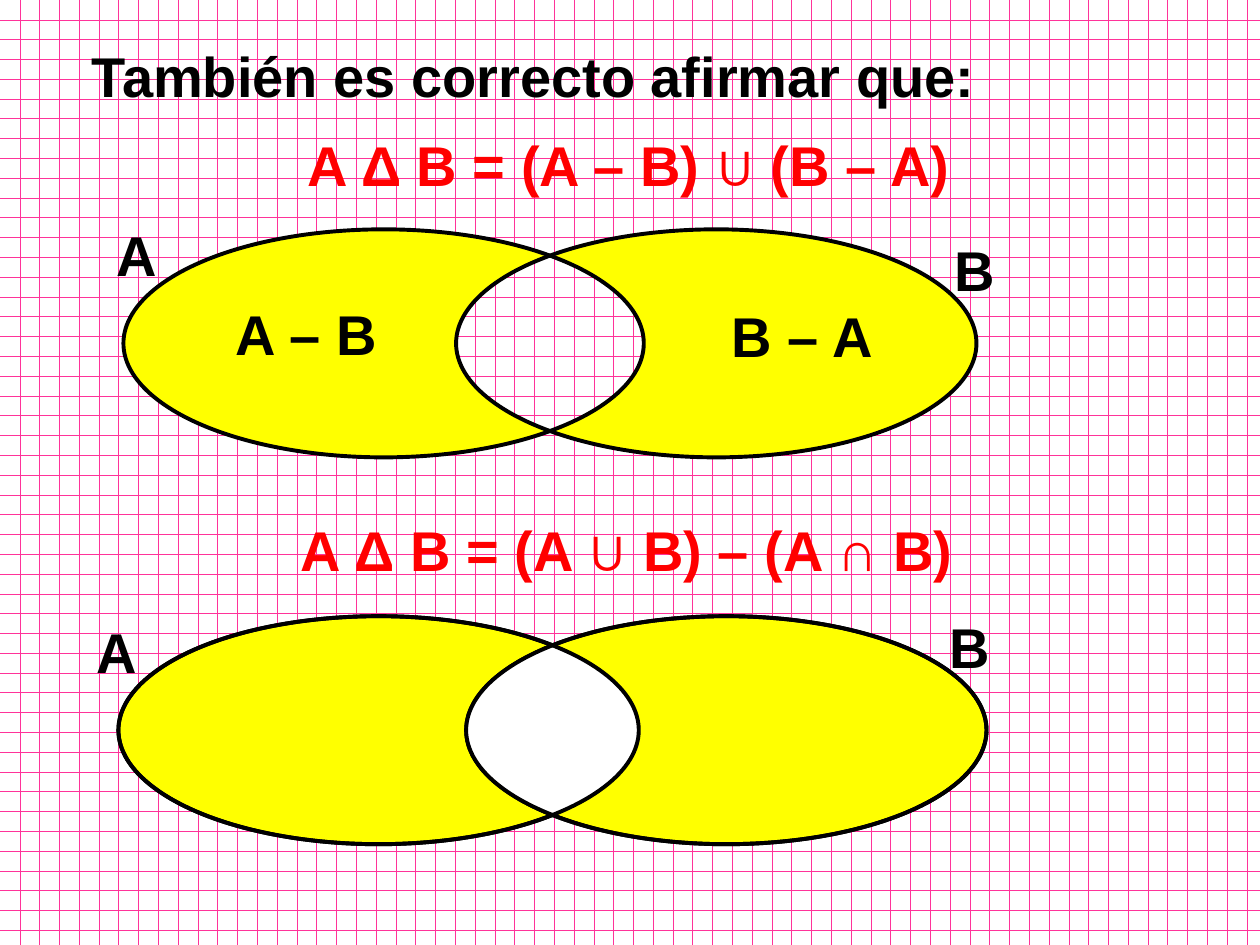
import math
from dataclasses import dataclass

import pptx
import pptx.dml.color
import pptx.enum.dml
import pptx.enum.shapes
import pptx.enum.text
import pptx.util

RGB = pptx.dml.color.RGBColor.from_string
Inches, Pt = pptx.util.Inches, pptx.util.Pt


@dataclass(frozen=True)
class Theme:
    font: str = "Arial"
    size: float = 32
    ink: str = "000000"
    accent: str = "FF0000"
    area: str = "FFFF00"
    paper: str = "FFFFFF"
    grid: str = "FF3399"
    outline: float = 2.25
    hairline: float = 0.75


THEME = Theme()
SLIDE_W, SLIDE_H = 10, 7.5
OVAL_W, OVAL_H = 4.13, 1.81


def set_text(sp, text, color=THEME.ink, wrap=True):
    """Write one bold, left-aligned line into a box or placeholder."""
    tf = sp.text_frame
    tf.word_wrap = wrap
    tf.auto_size = pptx.enum.text.MSO_AUTO_SIZE.SHAPE_TO_FIT_TEXT
    tf.vertical_anchor = pptx.enum.text.MSO_ANCHOR.TOP
    p = tf.paragraphs[0]
    p.alignment = pptx.enum.text.PP_ALIGN.LEFT
    r = p.add_run()
    r.text = text
    r.font.name, r.font.size, r.font.bold = THEME.font, Pt(THEME.size), True
    r.font.color.rgb = RGB(color)


def add_label(s, text, x, y, w, color=THEME.ink, wrap=True):
    sp = s.shapes.add_textbox(Inches(x), Inches(y), Inches(w), Inches(0.64))
    set_text(sp, text, color, wrap)


def style(sp, fill, width):
    sp.shadow.inherit = False
    if fill:
        sp.fill.solid()
        sp.fill.fore_color.rgb = RGB(fill)
    else:
        sp.fill.background()
    sp.line.color.rgb = RGB(THEME.ink)
    sp.line.width = Pt(width)


def add_ovals(s, lefts, top, fill=None):
    for left in lefts:
        sp = s.shapes.add_shape(pptx.enum.shapes.MSO_SHAPE.OVAL, Inches(left),
                                Inches(top), Inches(OVAL_W), Inches(OVAL_H))
        style(sp, fill, THEME.outline)


def arc(left, top, start, end, steps=60):
    """Points along an oval between two angles."""
    angles = (start + (end - start) * i / steps for i in range(steps + 1))
    return [(Inches(left + OVAL_W / 2 * (1 + math.cos(a))),
             Inches(top + OVAL_H / 2 * (1 + math.sin(a)))) for a in angles]


def add_region(s, points, fill):
    fb = s.shapes.build_freeform(*points[0])
    fb.add_line_segments(points[1:], close=True)
    style(fb.convert_to_shape(), fill, THEME.hairline)


def crossing_angle(lefts):
    """Angle at which the two ovals meet, seen from the left one."""
    return math.acos((lefts[1] - lefts[0]) / OVAL_W)


def add_differences(s, lefts, top):
    """Crescents A – B and B – A."""
    (a, b), t, pi = lefts, crossing_angle(lefts), math.pi
    add_region(s, arc(b, top, pi + t, 3 * pi - t) + arc(a, top, t, -t), THEME.area)
    add_region(s, arc(a, top, t, 2 * pi - t) + arc(b, top, pi + t, pi - t), THEME.area)


def add_intersection(s, lefts, top):
    (a, b), t, pi = lefts, crossing_angle(lefts), math.pi
    add_region(s, arc(a, top, -t, t) + arc(b, top, pi - t, pi + t), THEME.paper)


def main():
    prs = pptx.Presentation()
    prs.slide_width, prs.slide_height = Inches(SLIDE_W), Inches(SLIDE_H)
    s = prs.slides.add_slide(prs.slide_layouts[5])

    # Grid paper background
    fill = s.background.fill
    fill.patterned()
    fill.pattern = pptx.enum.dml.MSO_PATTERN.DOTTED_GRID
    fill.fore_color.rgb, fill.back_color.rgb = RGB(THEME.grid), RGB(THEME.paper)

    # Title
    title = s.shapes.title
    title.left, title.top = Inches(0.63), Inches(0.28)
    title.width, title.height = Inches(8.15), Inches(0.63)
    set_text(title, "También es correcto afirmar que:")

    # Upper diagram: union of the differences
    upper, top = (0.98, 3.62), 1.82
    add_differences(s, upper, top)
    add_ovals(s, upper, top)

    # Lower diagram: union minus intersection
    lower, top = (0.94, 3.7), 4.89
    add_ovals(s, lower, top, THEME.area)
    add_intersection(s, lower, top)
    add_ovals(s, lower, top)

    # Set names and region names
    for text, x, y, w in (("A", 0.83, 1.7, 0.59), ("B", 7.48, 1.82, 0.59),
                          ("A – B", 1.77, 2.33, 1.42), ("B – A", 5.71, 2.34, 1.42),
                          ("A", 0.67, 4.85, 0.59), ("B", 7.44, 4.81, 0.59)):
        add_label(s, text, x, y, w)

    # Formulas, centred on the slide
    for text, y, w in (("A Δ B = (A – B) ∪ (B – A)", 0.99, 5.32),
                       ("A Δ B = (A ∪ B) – (A ∩ B)", 4.04, 5.42)):
        add_label(s, text, (SLIDE_W - w) / 2, y, w, THEME.accent, wrap=False)

    prs.save("out.pptx")


if __name__ == "__main__":
    main()
